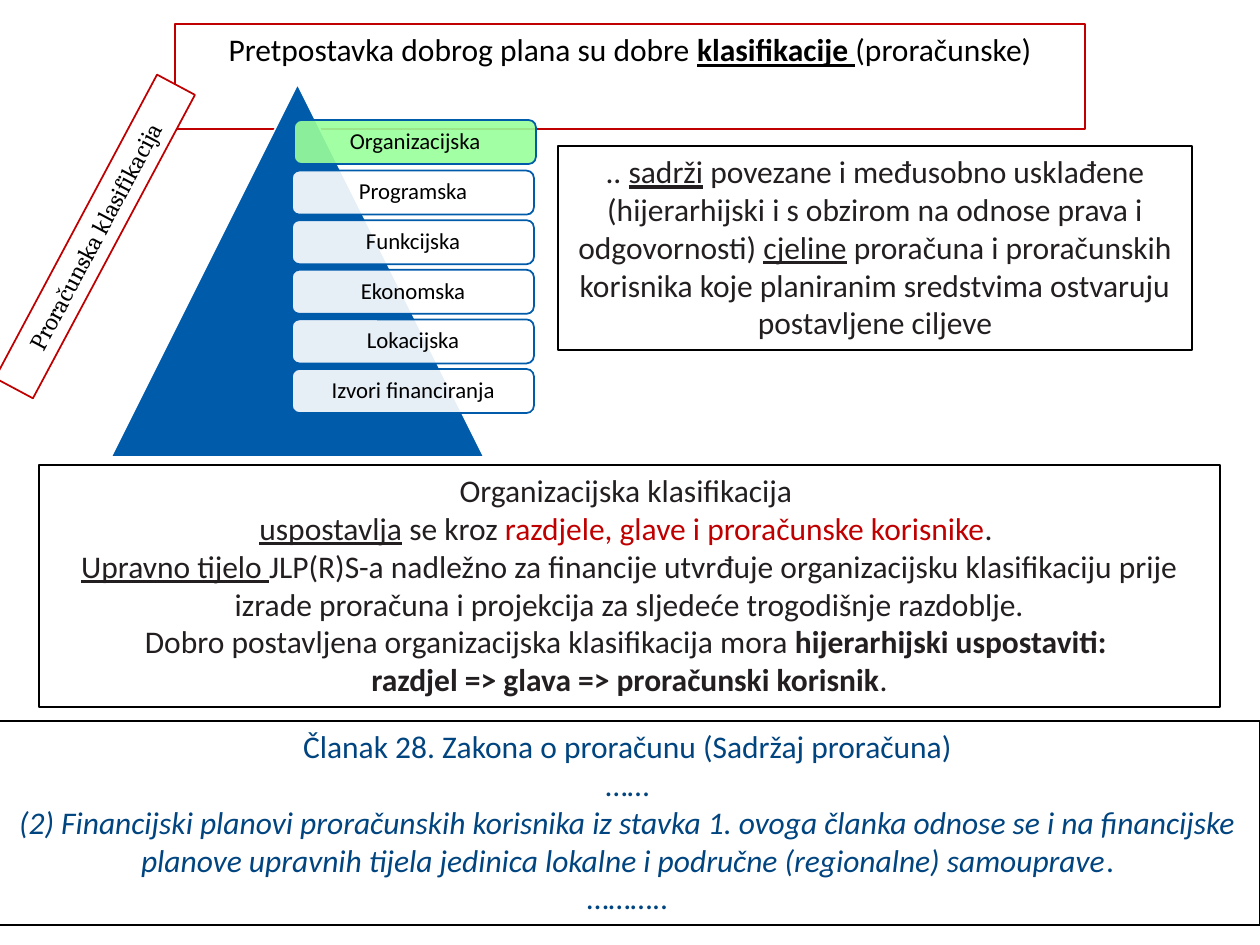
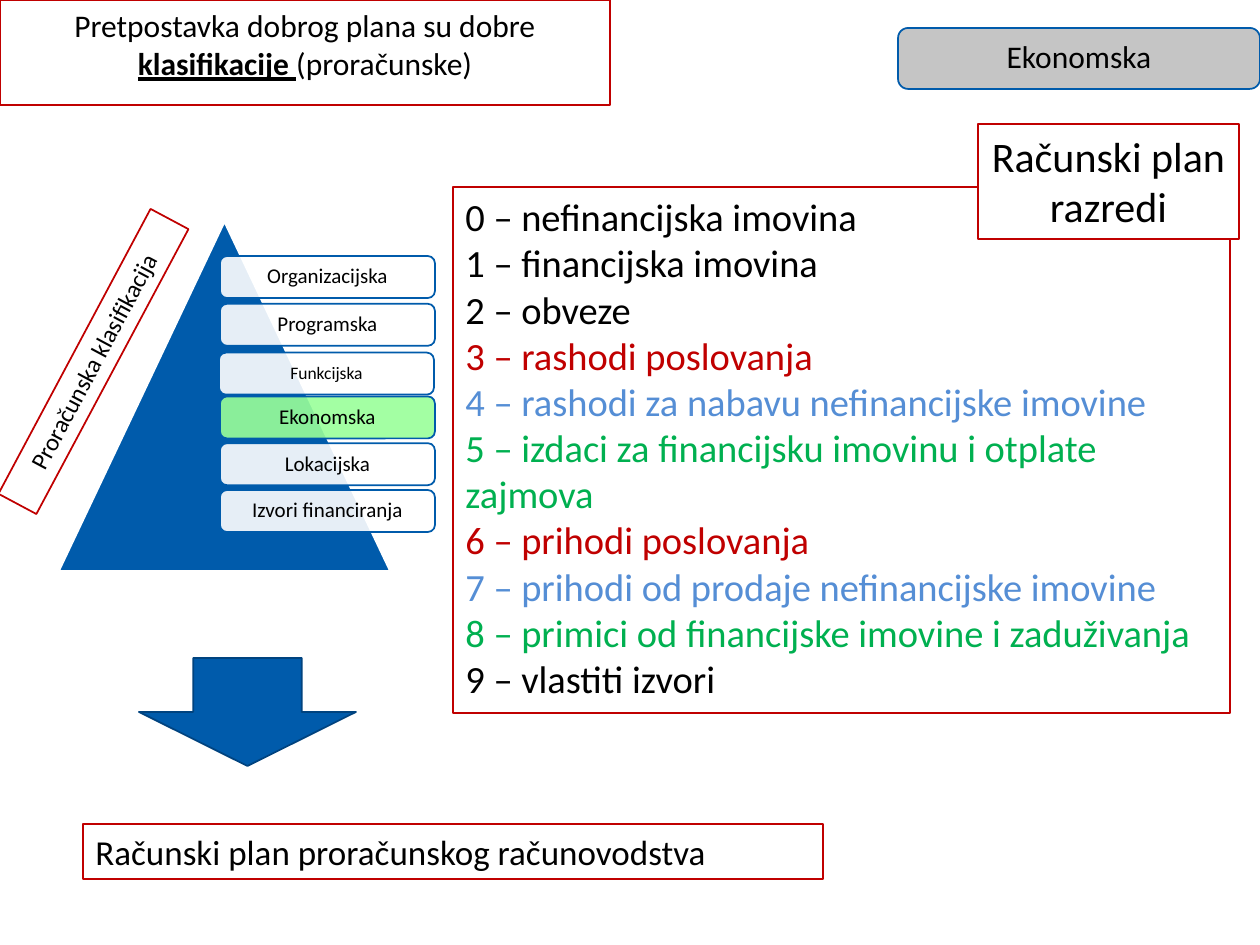
from lxml import etree
from pptx import Presentation
from pptx.dml.color import RGBColor
from pptx.enum.shapes import MSO_SHAPE
from pptx.enum.text import MSO_ANCHOR, MSO_AUTO_SIZE, PP_ALIGN
from pptx.oxml.ns import qn
from pptx.util import Emu, Pt

LEFT, CENTER = PP_ALIGN.LEFT, PP_ALIGN.CENTER
TOP, MIDDLE = MSO_ANCHOR.TOP, MSO_ANCHOR.MIDDLE
GROW = MSO_AUTO_SIZE.SHAPE_TO_FIT_TEXT
TRIANGLE, ROUNDED, DOWN_ARROW = (
    MSO_SHAPE.ISOSCELES_TRIANGLE, MSO_SHAPE.ROUNDED_RECTANGLE, MSO_SHAPE.DOWN_ARROW)

WHITE = RGBColor(0xFF, 0xFF, 0xFF)
BLACK = RGBColor(0, 0, 0)
INK = RGBColor(0x23, 0x1F, 0x20)
RED = RGBColor(0xC0, 0, 0)
BLUE = RGBColor(0, 0x5B, 0xAB)
DARK_BLUE = RGBColor(0, 0x43, 0x7F)
LAW_BLUE = RGBColor(0, 0x44, 0x80)
LIGHT_BLUE = RGBColor(0x55, 0x8E, 0xD5)
GREEN = RGBColor(0, 0xB0, 0x50)
ACTIVE = RGBColor(0x99, 0xFF, 0x99)
GREY = RGBColor(0xBF, 0xBF, 0xBF)

PX = 914400 / 126
FONT = "Calibri"
BOLD, UNDERLINE, ITALIC = {"bold": True}, {"underline": True}, {"italic": True}

# A paragraph is a list of (text, format) runs.
TITLE = [[("Pretpostavka dobrog plana su dobre ", {}),
          ("klasifikacije ", BOLD | UNDERLINE), ("(proračunske)", {})]]
SIDE_LABEL = [[("Proračunska klasifikacija", {})]]
CLASSIFICATIONS = ["Organizacijska", "Programska", "Funkcijska",
                   "Ekonomska", "Lokacijska", "Izvori financiranja"]

DEFINITION = [[
    (".. ", {}), ("sadrži", UNDERLINE),
    (" povezane i međusobno usklađene (hijerarhijski i s obzirom na odnose prava i "
     "odgovornosti) ", {}),
    ("cjeline", UNDERLINE),
    (" proračuna i proračunskih korisnika koje planiranim sredstvima ostvaruju "
     "postavljene ciljeve", {})]]
ORGANISATION = [
    [("Organizacijska klasifikacija ", {})],
    [("uspostavlja", UNDERLINE), (" se kroz ", {}),
     ("razdjele, glave i proračunske korisnike", {"color": RED}), (". ", {})],
    [("Upravno tijelo ", UNDERLINE),
     ("JLP(R)S-a nadležno za financije utvrđuje organizacijsku klasifikaciju prije "
      "izrade proračuna i projekcija za sljedeće trogodišnje razdoblje.", {})],
    [("Dobro postavljena organizacijska klasifikacija mora ", {}),
     ("hijerarhijski uspostaviti: ", BOLD)],
    [("razdjel => glava => proračunski korisnik", BOLD), (".", {})]]
LAW = [
    [("Članak 28. Zakona o proračunu (Sadržaj proračuna)", {})],
    [("……", {})],
    [("(2) Financijski planovi proračunskih korisnika iz stavka 1. ovoga članka odnose "
      "se i na financijske planove upravnih tijela jedinica lokalne i područne "
      "(regionalne) samouprave", ITALIC), (".", {})],
    [("………..", {})]]

ACCOUNT_CLASSES = [
    ("nefinancijska imovina", BLACK),
    ("financijska imovina", BLACK),
    ("obveze", BLACK),
    ("rashodi poslovanja", RED),
    ("rashodi za nabavu nefinancijske imovine", LIGHT_BLUE),
    ("izdaci za financijsku imovinu i otplate zajmova", GREEN),
    ("prihodi poslovanja", RED),
    ("prihodi od prodaje nefinancijske imovine", LIGHT_BLUE),
    ("primici od financijske imovine i zaduživanja", GREEN),
    ("vlastiti izvori", BLACK)]
ACCOUNTS = [[(f"{number} – {name}", {"color": color})]
            for number, (name, color) in enumerate(ACCOUNT_CLASSES)]
ACCOUNTS_HEADING = [[("Računski plan", {})], [("razredi", {})]]
CHART_OF_ACCOUNTS = [[("Računski plan proračunskog računovodstva", {})]]

# Bars run evenly from first to last top; nudges shift single bars by (x, y).
PYRAMIDS = [
    dict(triangle=(111, 84, 373, 373), left=292, first=121, last=369, bar=(242, 44),
         size=13, active="Organizacijska", nudges={"Organizacijska": (2, -1)}, sizes={}),
    dict(triangle=(59, 222, 331, 349), left=220, first=256, last=490, bar=(215, 42),
         size=12, active="Ekonomska",
         nudges={"Programska": (0, 1), "Funkcijska": (-1, 3)}, sizes={"Funkcijska": 10})]


def emu(box):
    return [Emu(round(length * PX)) for length in box]


def write(shape, paragraphs, size, color=BLACK, align=CENTER, font=FONT, spacing=None):
    frame = shape.text_frame
    for index, runs in enumerate(paragraphs):
        paragraph = frame.add_paragraph() if index else frame.paragraphs[0]
        paragraph.alignment = align
        if spacing:
            paragraph.line_spacing = spacing
        for text, style in runs:
            run = paragraph.add_run()
            run.text = text
            style = {"name": font, "size": Pt(size), "color": color} | style
            run.font.color.rgb = style.pop("color")
            for attribute, value in style.items():
                setattr(run.font, attribute, value)


def paint(shape, fill, line):
    shape.fill.solid()
    shape.fill.fore_color.rgb = fill
    shape.line.color.rgb = line
    shape.line.width = Pt(1)


def frame_text(shape, border, wrap=True):
    """Give a text box or title its white fill, border and growing frame."""
    paint(shape, WHITE, border)
    for attribute, value in {"word_wrap": wrap, "auto_size": GROW,
                             "vertical_anchor": TOP}.items():
        setattr(shape.text_frame, attribute, value)


def add_title(slide, box):
    title = slide.shapes.title
    title.left, title.top, title.width, title.height = emu(box)
    frame_text(title, RED)
    write(title, TITLE, 18)


def add_box(slide, box, paragraphs, size, border=RED, wrap=True, rotation=0, **text):
    panel = slide.shapes.add_textbox(*emu(box))
    panel.rotation = rotation
    frame_text(panel, border, wrap)
    write(panel, paragraphs, size, **text)


def add_solid(slide, kind, box, fill, line):
    solid = slide.shapes.add_shape(kind, *emu(box))
    solid.shadow.inherit = False
    paint(solid, fill, line)
    return solid


def add_bar(slide, box, name, size, fill):
    """Add a rounded, slightly transparent bar with its name."""
    bar = add_solid(slide, ROUNDED, box, fill, BLUE)
    color = bar.fill._xPr.find(qn("a:solidFill"))[0]
    etree.SubElement(color, qn("a:alpha"), val="90000")
    margin = emu([8])[0]
    for side in ("left", "top", "right", "bottom"):
        setattr(bar.text_frame, f"margin_{side}", margin)
    bar.text_frame.word_wrap = True
    bar.text_frame.vertical_anchor = MIDDLE
    write(bar, [[(name, {})]], size, spacing=0.9)


def add_pyramid(slide, pyramid):
    add_solid(slide, TRIANGLE, pyramid["triangle"], BLUE, WHITE)
    pitch = (pyramid["last"] - pyramid["first"]) / (len(CLASSIFICATIONS) - 1)
    for index, name in enumerate(CLASSIFICATIONS):
        dx, dy = pyramid["nudges"].get(name, (0, 0))
        box = (pyramid["left"] + dx, pyramid["first"] + index * pitch + dy, *pyramid["bar"])
        add_bar(slide, box, name, pyramid["sizes"].get(name, pyramid["size"]),
                ACTIVE if name == pyramid["active"] else WHITE)


def add_side_label(slide, box, font):
    add_box(slide, box, SIDE_LABEL, 14, rotation=298.1, font=font)


def build_organisation(slide):
    add_pyramid(slide, PYRAMIDS[0])
    add_side_label(slide, (-77, 215, 344, 43), "Cambria")
    add_title(slide, (175, 24, 910, 51))
    add_box(slide, (558, 146, 634, 204), DEFINITION, 18, BLACK, color=INK)
    add_box(slide, (39, 465, 1181, 242), ORGANISATION, 18, BLACK, color=INK)
    add_box(slide, (-5, 721, 1265, 204), LAW, 18, BLACK, color=LAW_BLUE)


def build_economic(slide):
    add_title(slide, (0, 0, 610, 89))
    add_solid(slide, DOWN_ARROW, (139, 658, 217, 108), BLUE, DARK_BLUE)
    add_box(slide, (83, 824, 740, 55), CHART_OF_ACCOUNTS, 20, align=LEFT)
    add_box(slide, (453, 187, 777, 526), ACCOUNTS, 22, align=LEFT)
    add_box(slide, (978, 124, 261, 115), ACCOUNTS_HEADING, 24, wrap=False)
    add_bar(slide, (898, 28, 362, 61), "Ekonomska", 18, GREY)
    add_pyramid(slide, PYRAMIDS[1])
    add_side_label(slide, (-68, 340, 323, 43), FONT)


def main():
    deck = Presentation()
    deck.slide_width, deck.slide_height = emu((1260, 945))
    title_only = deck.slide_layouts[5]
    for build in (build_organisation, build_economic):
        build(deck.slides.add_slide(title_only))
    deck.save("out.pptx")


if __name__ == "__main__":
    main()
